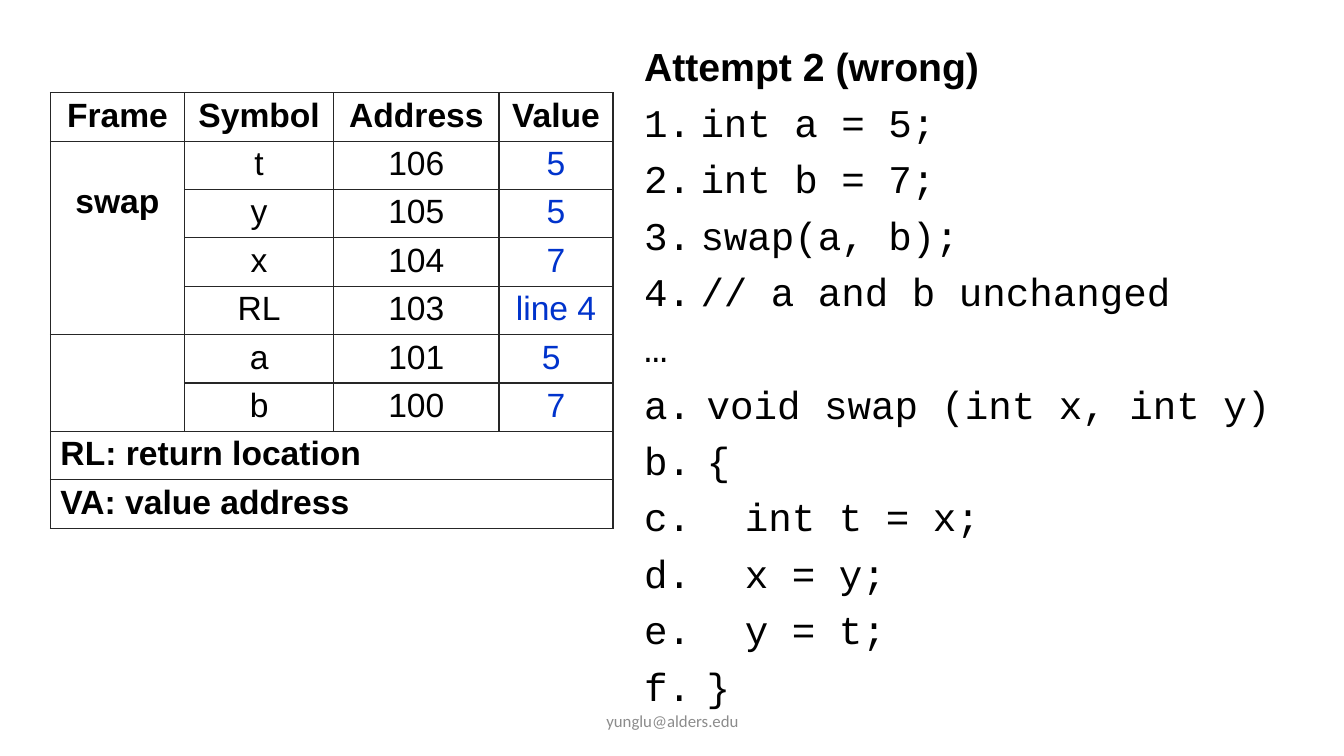
from lxml.etree import SubElement
from pptx import Presentation
from pptx.dml.color import RGBColor
from pptx.enum.text import MSO_ANCHOR, PP_ALIGN
from pptx.oxml.ns import qn
from pptx.util import Inches, Pt

COLORS = {"text": "000000", "value": "0033CC", "footer": "8C8C8C", "border": "262626"}


def style(para, font_name, size, color, bold=False):
    para.font.name = font_name
    para.font.size = Pt(size)
    para.font.bold = bold
    para.font.color.rgb = RGBColor.from_string(COLORS[color])


def fill_cell(cell, text, color="text", bold=False, align=PP_ALIGN.CENTER):
    cell.text = text
    para = cell.text_frame.paragraphs[0]
    para.alignment = align
    style(para, "Arial", 24, color, bold)


deck = Presentation()
deck.slide_width = Inches(13.33)
deck.slide_height = Inches(7.5)
page = deck.slides.add_slide(deck.slide_layouts[6])

# Code listing: text, numbering scheme, hanging indent
heading = "Attempt 2 (wrong)"
numbered = ["int a = 5;", "int b = 7;", "swap(a, b);", "// a and b unchanged"]
lettered = ["void swap (int x, int y)", "{", "\tint t = x;", "\tx = y;", "\ty = t;", "}"]
listing = [(heading, None, 0)]
listing += [(line, "arabicPeriod", 0.56) for line in numbered]
listing += [("…", None, 0)]
listing += [(line, "alphaLcPeriod", 0.62) for line in lettered]

code_box = page.shapes.add_textbox(Inches(6.29), Inches(0.42), Inches(6.43), Inches(6.16))
code_frame = code_box.text_frame
code_frame.word_wrap = True
for index, (line, numbering, indent) in enumerate(listing):
    para = code_frame.paragraphs[0] if index == 0 else code_frame.add_paragraph()
    para.text = line
    para.line_spacing = 0.9
    para.space_before = Pt(10)
    is_heading = line == heading
    style(para, "Arial" if is_heading else "Courier New", 28, "text", is_heading)
    if numbering:
        properties = para._p.get_or_add_pPr()
        properties.set("marL", str(Inches(indent)))
        properties.set("indent", str(-Inches(indent)))
        bullet = properties.makeelement(qn("a:buAutoNum"), {"type": numbering})
        properties.find(qn("a:defRPr")).addprevious(bullet)

# Footer
footer_box = page.shapes.add_textbox(Inches(4.42), Inches(6.95), Inches(4.5), Inches(0.4))
footer_frame = footer_box.text_frame
footer_frame.word_wrap = True
footer_frame.vertical_anchor = MSO_ANCHOR.MIDDLE
footer = footer_frame.paragraphs[0]
footer.text = "yunglu@alders.edu"
footer.alignment = PP_ALIGN.CENTER
style(footer, "Calibri", 12, "footer")

# Stack memory table
headers = ["Frame", "Symbol", "Address", "Value"]
memory = [
    ("t", "106", "5"),
    ("y", "105", "5"),
    ("x", "104", "7"),
    ("RL", "103", "line 4"),
    ("a", "101", "5 "),
    ("b", "100", "7"),
]
legend = ["RL: return location", "VA: value address"]
row_count = 1 + len(memory) + len(legend)

table = page.shapes.add_table(
    row_count, len(headers), Inches(0.5), Inches(0.92), Inches(5.58), Inches(4.25)
).table
for column, width in zip(table.columns, [1.33, 1.48, 1.64, 1.13]):
    column.width = Inches(width)

for cell in table.iter_cells():
    cell.margin_top = cell.margin_bottom = Inches(0.04)
    cell.vertical_anchor = MSO_ANCHOR.TOP
    properties = cell._tc.get_or_add_tcPr()
    for side in ("lnL", "lnR", "lnT", "lnB"):
        border = SubElement(properties, qn(f"a:{side}"), w=str(Pt(1)))
        border_fill = SubElement(border, qn("a:solidFill"))
        SubElement(border_fill, qn("a:srgbClr"), val=COLORS["border"])
    cell.fill.background()

for column, header in enumerate(headers):
    fill_cell(table.cell(0, column), header, bold=True)
for row, entries in enumerate(memory, start=1):
    for column, entry in enumerate(entries, start=1):
        fill_cell(table.cell(row, column), entry, "value" if column == 3 else "text")
for row, note in enumerate(legend, start=1 + len(memory)):
    table.cell(row, 0).merge(table.cell(row, 3))
    fill_cell(table.cell(row, 0), note, bold=True, align=PP_ALIGN.LEFT)

swap_cell = table.cell(1, 0)
swap_cell.merge(table.cell(4, 0))
fill_cell(swap_cell, "swap", bold=True)
swap_cell.margin_top = Inches(0.42)
table.cell(5, 0).merge(table.cell(6, 0))

deck.save("out.pptx")
